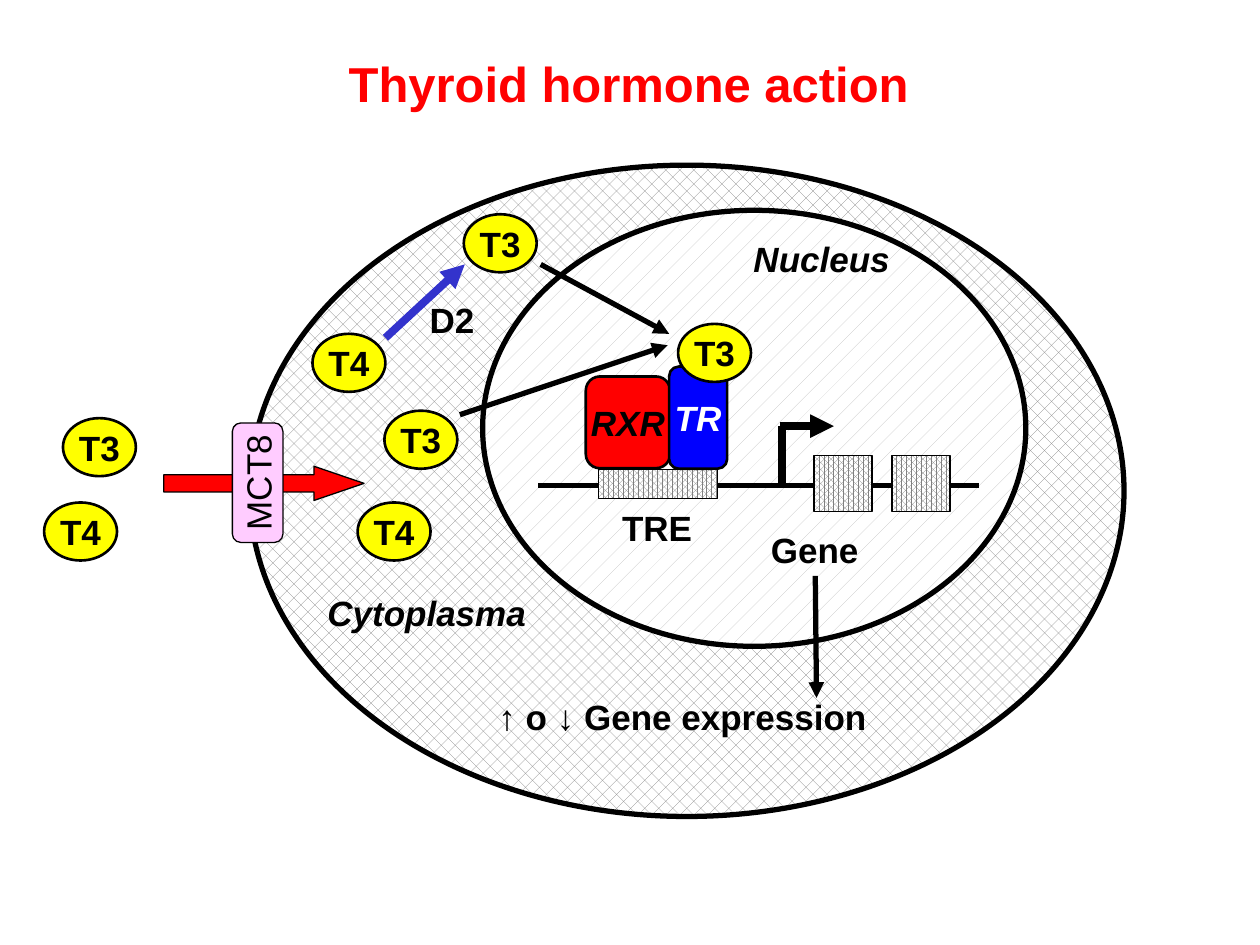
from lxml import etree
from pptx import Presentation
from pptx import util as u
from pptx.dml.color import RGBColor
from pptx.enum import dml, shapes, text
from pptx.oxml.ns import qn

BLACK, WHITE, RED, GREY = "000000", "FFFFFF", "FF0000", "808080"
FONT = "Arial"
SHAPE = shapes.MSO_SHAPE
PATTERN = dml.MSO_PATTERN


def colour(value):
    return RGBColor.from_string(value)


def write(frame, wording, size=20, color=BLACK, bold=True, italic=False,
          align=text.PP_ALIGN.CENTER):
    paragraph = frame.paragraphs[0]
    paragraph.alignment = align
    run = paragraph.add_run()
    run.text = wording
    run.font.name = FONT
    run.font.size = u.Pt(size)
    run.font.bold = bold
    run.font.italic = italic
    run.font.color.rgb = colour(color)


def add_part(slide, kind, left, top, width, height, line_width, fill=None):
    part = slide.shapes.add_shape(
        kind, u.Cm(left), u.Cm(top), u.Cm(width), u.Cm(height))
    part.shadow.inherit = False
    part.line.color.rgb = colour(BLACK)
    part.line.width = u.Pt(line_width)
    if fill:
        part.fill.solid()
        part.fill.fore_color.rgb = colour(fill)
    return part


def add_hatched(slide, kind, left, top, width, height, line_width, pattern, ink=GREY):
    part = add_part(slide, kind, left, top, width, height, line_width)
    part.fill.patterned()
    part.fill.pattern = pattern
    part.fill.fore_color.rgb = colour(ink)
    part.fill.back_color.rgb = colour(WHITE)


def add_named(slide, kind, wording, left, top, width, height, line_width, fill, **style):
    part = add_part(slide, kind, left, top, width, height, line_width, fill)
    part.text_frame.word_wrap = False
    part.text_frame.vertical_anchor = text.MSO_ANCHOR.MIDDLE
    write(part.text_frame, wording, **style)
    return part


def add_hormone(slide, wording, left, top):
    add_named(slide, SHAPE.OVAL, wording, left, top, 1.47, 1.17, 1.5, "FFFF00")


def add_label(slide, wording, left, top, width, italic=False):
    label = slide.shapes.add_textbox(u.Cm(left), u.Cm(top), u.Cm(width), u.Cm(1.09))
    label.text_frame.word_wrap = False
    label.text_frame.auto_size = text.MSO_AUTO_SIZE.SHAPE_TO_FIT_TEXT
    write(label.text_frame, wording, italic=italic, align=text.PP_ALIGN.LEFT)
    return label


def add_line(slide, start, end, width=3, color=BLACK, arrow=True):
    line = slide.shapes.add_connector(
        shapes.MSO_CONNECTOR.STRAIGHT, *(u.Cm(value) for value in start + end))
    line.line.color.rgb = colour(color)
    line.line.width = u.Pt(width)
    if arrow:
        etree.SubElement(line.line._get_or_add_ln(), qn("a:tailEnd"), type="triangle")
    etree.SubElement(line._element.spPr, qn("a:effectLst"))
    return line


def add_title(slide, wording):
    title = slide.shapes.title
    title.left, title.top = u.Cm(0.61), u.Cm(0.69)
    title.width, title.height = u.Cm(24.13), u.Cm(1.96)
    title.text_frame.vertical_anchor = text.MSO_ANCHOR.MIDDLE
    write(title.text_frame, wording, size=28, color=RED)


def add_cell(slide):
    add_hatched(slide, SHAPE.OVAL, 5.03, 3.33, 17.63, 13.13, 3, PATTERN.PERCENT_25)
    add_hatched(slide, SHAPE.OVAL, 9.73, 4.24, 10.95, 8.79, 3, PATTERN.PERCENT_5, "C0C0C0")
    add_label(slide, "Cytoplasma", 6.35, 11.79, 4.52, italic=True)
    add_label(slide, "Nucleus", 14.94, 4.67, 3.25, italic=True)


def add_gene(slide):
    dna = 9.78
    add_line(slide, (10.85, dna), (19.74, dna), arrow=False)
    add_hatched(slide, SHAPE.RECTANGLE, 12.07, 9.47, 2.39, 0.58, 0.75, PATTERN.PERCENT_75)
    for exon_left in (16.41, 17.98):
        add_hatched(slide, SHAPE.RECTANGLE, exon_left, 9.19, 1.17, 1.12, 0.75,
                    PATTERN.PERCENT_75)
    add_line(slide, (15.77, 8.59), (15.77, dna), width=4.5, arrow=False)
    add_line(slide, (15.72, 8.59), (16.81, 8.59), width=4.5)
    add_label(slide, "TRE", 12.29, 10.08, 1.93)
    gene = add_label(slide, "Gene", 15.29, 10.52, 2.29)
    add_label(slide, "↑ o ↓ Gene expression", 9.8, 13.89, 8.08)
    expression = add_line(slide, (16.46, 11.53), (16.46, 14.07))
    expression.begin_connect(gene, 2)


def add_receptors(slide):
    add_named(slide, SHAPE.ROUNDED_RECTANGLE, "RXR", 11.81, 7.59, 1.7, 1.85, 1.5,
              RED, italic=True)
    add_named(slide, SHAPE.ROUNDED_RECTANGLE, "TR", 13.49, 7.39, 1.17, 2.06, 1.5,
              "0000FF", color=WHITE, italic=True)


def add_transport(slide):
    uptake = add_part(slide, SHAPE.RIGHT_ARROW, 3.3, 9.4, 4.04, 0.69, 0.75, RED)
    uptake.adjustments[1] = 1.465
    transporter = add_named(slide, SHAPE.ROUNDED_RECTANGLE, "MCT8", 3.99, 9.22, 2.41, 1.02,
                            0.75, "FFCCFF", bold=False)
    transporter.rotation = 270


def add_hormones(slide):
    for wording, left, top in (
        ("T3", 13.67, 6.53), ("T3", 9.35, 4.32), ("T3", 1.27, 8.43), ("T4", 0.89, 10.13),
        ("T4", 6.3, 6.73), ("T3", 7.75, 8.28), ("T4", 7.21, 10.13),
    ):
        add_hormone(slide, wording, left, top)
    add_line(slide, (10.9, 5.33), (13.49, 6.73))
    add_line(slide, (9.27, 8.36), (13.46, 6.96))
    add_line(slide, (7.77, 6.81), (9.37, 5.33), width=4.5, color="3333CC")
    add_label(slide, "D2", 8.41, 5.89, 1.42)


def main():
    deck = Presentation()
    deck.slide_width, deck.slide_height = u.Cm(25.4), u.Cm(19.05)
    slide = deck.slides.add_slide(deck.slide_layouts[5])
    add_title(slide, "Thyroid hormone action")
    add_cell(slide)
    add_gene(slide)
    add_receptors(slide)
    add_transport(slide)
    add_hormones(slide)
    deck.save("out.pptx")


if __name__ == "__main__":
    main()
